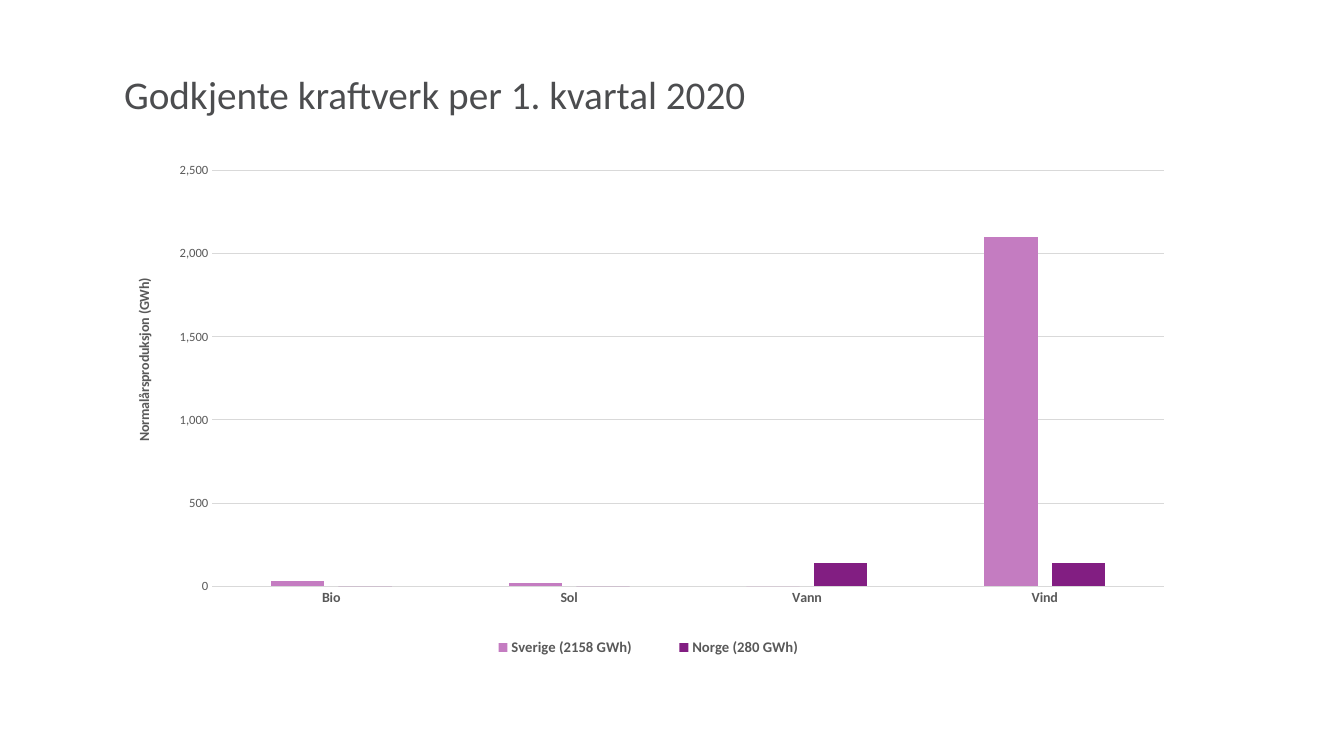
"""Build a slide with a column chart of approved power plants per quarter."""
from dataclasses import dataclass
from typing import Any

from lxml import etree
from pptx import Presentation
from pptx.chart.axis import CategoryAxis, ValueAxis
from pptx.chart.chart import Chart
from pptx.chart.data import CategoryChartData
from pptx.dml.color import RGBColor
from pptx.enum.chart import XL_CHART_TYPE, XL_LEGEND_POSITION, XL_TICK_MARK
from pptx.enum.text import MSO_ANCHOR, MSO_AUTO_SIZE, PP_ALIGN
from pptx.oxml.ns import qn
from pptx.util import Pt

COLUMNS = XL_CHART_TYPE.COLUMN_CLUSTERED
BOTTOM = XL_LEGEND_POSITION.BOTTOM
NO_TICK = XL_TICK_MARK.NONE
TOP = MSO_ANCHOR.TOP
NO_FIT = MSO_AUTO_SIZE.NONE
LEFT, CENTER = PP_ALIGN.LEFT, PP_ALIGN.CENTER

EMU_PER_PX = 914400 / 100.8
FONT = "Calibri"
COLORS = {
    "title": "4C4D4F",
    "label": "595959",
    "grid": "D9D9D9",
    "sweden": "C47CC1",
    "norway": "821E82",
}


@dataclass(frozen=True)
class Box:
    left: int
    top: int
    width: int
    height: int

    def emu(self) -> list[int]:
        return [px(n) for n in (self.left, self.top, self.width, self.height)]


@dataclass(frozen=True)
class Country:
    name: str
    production: tuple[int, ...]
    color: str


SOURCES = ("Bio", "Sol", "Vann", "Vind")
COUNTRIES = (
    Country("Sverige (2158 GWh)", (30, 20, 0, 2100), "sweden"),
    Country("Norge (280 GWh)", (0, 0, 140, 140), "norway"),
)
TITLE_BOX = Box(114, 65, 1136, 91)
CHART_BOX = Box(114, 155, 1069, 524)


def px(length: int) -> int:
    return round(length * EMU_PER_PX)


def rgb(color: str) -> RGBColor:
    return RGBColor.from_string(COLORS[color])


def set_font(font: Any, size: float, color: str = "label", bold: bool = False) -> None:
    font.name = FONT
    font.size = Pt(size)
    font.bold = bold
    font.color.rgb = rgb(color)


def write_text(frame: Any, text: str, *, size: float, color: str = "label",
               bold: bool = False, align: PP_ALIGN = LEFT) -> None:
    paragraph = frame.paragraphs[0]
    paragraph.alignment = align
    paragraph.line_spacing = 1.0
    run = paragraph.add_run()
    run.text = text
    set_font(run.font, size, color, bold)


def set_layout(part: Any, index: int, inner: bool = False, **fractions: float) -> None:
    for previous in part.findall(qn("c:layout")):
        part.remove(previous)
    layout = etree.Element(qn("c:layout"))
    manual = etree.SubElement(layout, qn("c:manualLayout"))
    settings: dict[str, Any] = {"layoutTarget": "inner"} if inner else {}
    settings |= {"xMode": "edge", "yMode": "edge", **fractions}
    for tag, value in settings.items():
        etree.SubElement(manual, qn(f"c:{tag}")).set("val", str(value))
    part.insert(index, layout)


def set_line(line: Any) -> None:
    line.color.rgb = rgb("grid")
    line.width = Pt(0.75)


def format_source_axis(axis: CategoryAxis) -> None:
    axis.major_tick_mark = axis.minor_tick_mark = NO_TICK
    axis.has_major_gridlines = False
    set_line(axis.format.line)
    set_font(axis.tick_labels.font, 10, bold=True)


def format_production_axis(axis: ValueAxis) -> None:
    axis.minimum_scale, axis.maximum_scale, axis.major_unit = 0, 2500, 500
    axis.major_tick_mark = axis.minor_tick_mark = NO_TICK
    axis.format.line.fill.background()
    set_line(axis.major_gridlines.format.line)
    axis.tick_labels.number_format = "#,##0"
    axis.tick_labels.number_format_is_linked = False
    set_font(axis.tick_labels.font, 9)
    write_text(axis.axis_title.text_frame, "Normalårsproduksjon (GWh)",
               size=10, bold=True, align=CENTER)
    set_layout(axis.axis_title._element, 1, x=0.017, y=0.23)


def format_legend(chart: Chart) -> None:
    chart.has_legend = True
    chart.legend.position = BOTTOM
    chart.legend.include_in_layout = False
    set_font(chart.legend.font, 10.5, bold=True)
    set_layout(chart.legend._element, 1, x=0.32, y=0.915, w=0.36, h=0.05)


def add_production_chart(slide: Any) -> None:
    production = CategoryChartData()
    production.categories = SOURCES
    for country in COUNTRIES:
        production.add_series(country.name, country.production)
    chart = slide.shapes.add_chart(COLUMNS, *CHART_BOX.emu(), production).chart
    chart.has_title = False
    chart.font.name = FONT
    chart.font.size = Pt(10)
    plot = chart.plots[0]
    plot.gap_width, plot.overlap, plot.vary_by_categories = 219, -27, False
    for series, country in zip(plot.series, COUNTRIES):
        series.format.fill.solid()
        series.format.fill.fore_color.rgb = rgb(country.color)
        series.invert_if_negative = False
    format_source_axis(chart.category_axis)
    format_production_axis(chart.value_axis)
    format_legend(chart)
    set_layout(chart._chartSpace.chart.plotArea, 0, inner=True,
               x=0.092, y=0.03, w=0.89, h=0.793)


def add_title(slide: Any) -> None:
    title = slide.shapes.title
    title.left, title.top, title.width, title.height = TITLE_BOX.emu()
    frame = title.text_frame
    frame.word_wrap = True
    frame.auto_size = NO_FIT
    frame.vertical_anchor = TOP
    write_text(frame, "Godkjente kraftverk per 1. kvartal 2020", size=28, color="title")


def main() -> None:
    deck = Presentation()
    deck.slide_width, deck.slide_height = px(1344), px(756)
    slide = deck.slides.add_slide(deck.slide_layouts.get_by_name("Title Only"))
    add_title(slide)
    add_production_chart(slide)
    deck.save("out.pptx")


if __name__ == "__main__":
    main()
